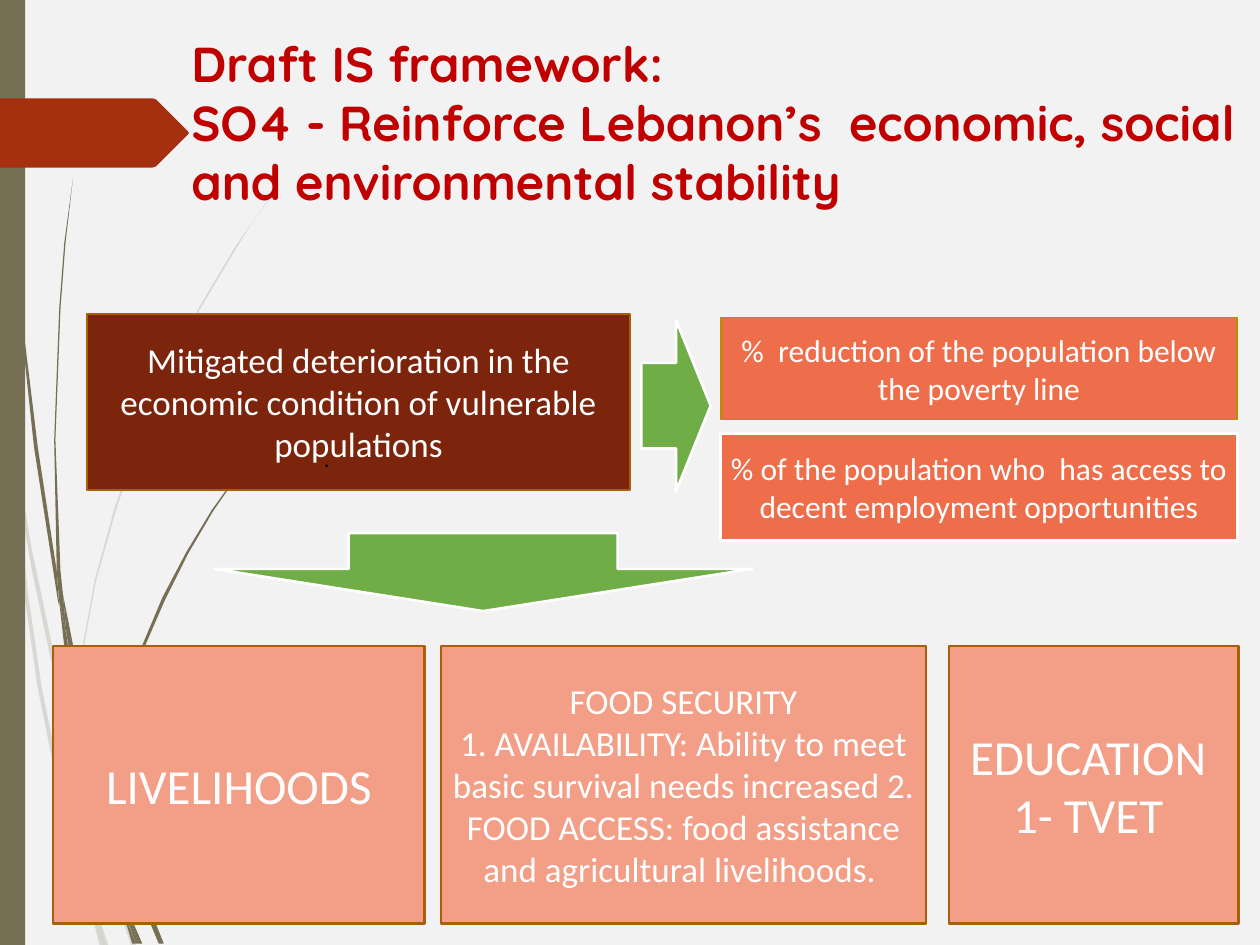
from lxml import etree
from pptx import Presentation
from pptx.dml.color import RGBColor
from pptx.enum import shapes, text
from pptx.oxml.ns import qn
from pptx.util import Inches, Pt

BACKGROUND = RGBColor(0xF2, 0xF2, 0xF2)
OLIVE = RGBColor(0x76, 0x6F, 0x54)
RUST = RGBColor(0xA5, 0x30, 0x10)
TITLE_RED = RGBColor(0xC0, 0x00, 0x00)
BROWN = RGBColor(0x7C, 0x24, 0x0C)
OCHRE = RGBColor(0xA7, 0x5F, 0x0A)
GOLD = RGBColor(0xBC, 0x8C, 0x00)
ORANGE = RGBColor(0xEE, 0x6E, 0x4B)
SALMON = RGBColor(0xF3, 0x9E, 0x87)
GREEN = RGBColor(0x70, 0xAD, 0x47)
WHITE = RGBColor(0xFF, 0xFF, 0xFF)
BLACK = RGBColor(0x00, 0x00, 0x00)

PALE_WISPS = [
    [(.08, 3.5), (.06, 3.22), (0, 2.82), (0, 2.99), (.07, 3.44)],
    [(.4, 5.22), (.59, 5.99), (.59, 5.86), (.43, 5.2), (.25, 4.35), (.1, 3.45),
     (.12, 3.76), (.25, 4.51)],
    [(.64, 6.07), (.61, 5.96), (.61, 6.1), (.85, 6.94), (1.04, 7.5), (1.08, 7.5),
     (.88, 6.92)],
    [(.83, 7.5), (.86, 7.5), (.73, 7.11)],
    [(.64, 6.83), (.48, 6.19), (.33, 5.45), (.22, 4.69), (.12, 3.76), (.08, 3.5),
     (.19, 4.7), (.3, 5.46), (.45, 6.21), (.64, 6.93), (.7, 7.14)],
    [(.61, 5.84), (.65, 5.22), (.76, 4.62), (.92, 4.05), (1.11, 3.49), (1.34, 2.95),
     (1.59, 2.45), (1.87, 1.98), (2.01, 1.75), (2.17, 1.54), (2.17, 1.53),
     (2.01, 1.75), (1.86, 1.97), (1.58, 2.44), (1.33, 2.94), (1.1, 3.48),
     (.91, 4.03), (.75, 4.61), (.64, 5.22), (.59, 5.84), (.61, 5.96)],
    [(.7, 7.14), (.79, 7.5), (.82, 7.5)],
    [(.67, 6.92), (.65, 6.83), (.69, 7.07), (.7, 7.14), (.82, 7.5), (.83, 7.5),
     (.73, 7.11)],
]
DARK_WISPS = [
    [(.05, 1.1), (.14, 2.33), (.27, 3.55), (.46, 4.77), (.47, 4.81), (.45, 4.53),
     (.3, 3.55), (.15, 2.32), (.06, 1.09), (.04, .48), (.03, 0), (.02, 0), (.03, .48)],
    [(.73, 5.92), (.88, 6.45), (.88, 6.31), (.77, 5.9), (.62, 5.32), (.5, 4.72),
     (.53, 5.05), (.62, 5.49)],
    [(.94, 6.49), (.91, 6.41), (.91, 6.56), (1.09, 7.08), (1.26, 7.49), (1.3, 7.49),
     (1.13, 7.06)],
    [(.91, 6.91), (.81, 6.57), (.69, 6.07), (.6, 5.56), (.53, 5.05), (.47, 4.77),
     (.56, 5.57), (.66, 6.08), (.77, 6.59), (.92, 7.08), (.97, 7.22), (.96, 7.17)],
    [(.5, 4.72), (.48, 4.53), (.44, 3.49), (.48, 2.45), (.52, 1.93), (.58, 1.41),
     (.51, 1.93), (.47, 2.45), (.43, 3.49), (.45, 4.49), (.49, 4.72)],
    [(1.1, 7.49), (1.13, 7.49), (1, 7.19)],
    [(.47, 4.77), (.53, 5.05), (.5, 4.72), (.45, 4.49), (.45, 4.53)],
    [(.91, 6.33), (.94, 5.92), (1.03, 5.52), (1.15, 5.13), (1.31, 4.76), (1.49, 4.4),
     (1.69, 4.06), (1.91, 3.74), (2.16, 3.44), (2.15, 3.44), (1.91, 3.73),
     (1.68, 4.05), (1.48, 4.38), (1.29, 4.74), (1.13, 5.12), (1.01, 5.51),
     (.92, 5.91), (.88, 6.31), (.91, 6.41)],
    [(.97, 7.22), (1.05, 7.49), (1.08, 7.49)],
    [(.96, 7.06), (.91, 6.91), (.96, 7.17), (1.08, 7.49), (1.1, 7.49), (1, 7.19)],
]
TAG_OUTLINE = [(0, .78), (1.21, .78), (1.24, .79), (1.49, 1.04), (1.5, 1.055),
               (1.49, 1.07), (1.24, 1.32), (1.21, 1.33), (0, 1.33)]


def paint(shape, fill, line=None, width=1.25, opacity=None):
    """Give a shape its fill, outline and opacity, without a shadow."""
    shape.shadow.inherit = False
    shape.fill.solid()
    shape.fill.fore_color.rgb = fill
    if opacity is not None:
        color = shape.fill._xPr.find(qn("a:solidFill"))[0]
        etree.SubElement(color, qn("a:alpha"), val=str(opacity * 1000))
    if line is None:
        shape.line.fill.background()
    else:
        shape.line.color.rgb = line
        shape.line.width = Pt(width)


def write(shape, lines, size=20, color=WHITE, font="Calibri", bold=False,
          align=text.PP_ALIGN.CENTER, anchor=text.MSO_ANCHOR.MIDDLE, inset=(.07, .04)):
    """Write one paragraph for each line of text into a shape."""
    frame = shape.text_frame
    frame.word_wrap = True
    frame.vertical_anchor = anchor
    frame.margin_left = frame.margin_right = Inches(inset[0])
    frame.margin_top = frame.margin_bottom = Inches(inset[1])
    for index, line in enumerate(lines):
        paragraph = frame.add_paragraph() if index else frame.paragraphs[0]
        paragraph.text = line
        paragraph.alignment = align
        for run in paragraph.runs:
            run.font.name = font
            run.font.size = Pt(size)
            run.font.bold = bold
            run.font.color.rgb = color


def add_preset(slide, kind, box, fill, **outline):
    """Add a painted preset shape in a box given in inches."""
    shape = slide.shapes.add_shape(kind, *map(Inches, box))
    paint(shape, fill, **outline)
    return shape


def add_outline(slide, points, fill, opacity=None):
    """Add a closed freeform through points given in inches."""
    start, *rest = [(Inches(x), Inches(y)) for x, y in points]
    builder = slide.shapes.build_freeform(*start, scale=1.0)
    builder.add_line_segments(rest, close=True)
    paint(builder.convert_to_shape(), fill, opacity=opacity)


def add_label(slide, box, lines, **style):
    """Add top-left aligned text in a box given in inches."""
    label = slide.shapes.add_textbox(*map(Inches, box))
    write(label, lines, align=text.PP_ALIGN.LEFT, anchor=text.MSO_ANCHOR.TOP, **style)


def add_card(slide, box, lines, fill, line=OCHRE, width=1.25, size=20):
    """Add an outlined rectangle with centred text."""
    card = add_preset(slide, shapes.MSO_SHAPE.RECTANGLE, box, fill, line=line, width=width)
    write(card, lines, size=size)


def add_arrow(slide, kind, box, head=.5):
    """Add a green block arrow with the given head proportion."""
    arrow = add_preset(slide, kind, box, GREEN, line=WHITE, width=1.5)
    arrow.adjustments[1] = head


def add_decoration(slide, height):
    """Draw the wisps, the side bar and the title tag."""
    for wisp in PALE_WISPS:
        add_outline(slide, wisp, OLIVE, opacity=20)
    for wisp in DARK_WISPS:
        add_outline(slide, wisp, OLIVE)
    add_preset(slide, shapes.MSO_SHAPE.RECTANGLE, (0, 0, .2, height), OLIVE)
    add_outline(slide, TAG_OUTLINE, RUST)


def add_outcome(slide, left, top):
    """Place the outcome, its arrow and its two indicators."""
    add_card(slide, (left, top, 4.31, 1.4),
             ["Mitigated deterioration in the economic condition of vulnerable populations"],
             BROWN)
    add_label(slide, (left + 1.81, top + .99, 5, .3), ["."], size=13.5, color=BLACK)
    add_arrow(slide, shapes.MSO_SHAPE.RIGHT_ARROW, (left + 4.4, top + .05, .55, 1.36))
    indicators = [
        (.03, .81, GOLD, 1, "%  reduction of the population below the poverty line"),
        (.95, .85, WHITE, 1.5,
         "% of the population who  has access to decent employment opportunities"),
    ]
    for offset, height, line, width, words in indicators:
        add_card(slide, (left + 5.03, top + offset, 4.1, height), [words], ORANGE,
                 line=line, width=width, size=18)


def add_sectors(slide, top, height):
    """Place the down arrow and the row of sector cards."""
    add_arrow(slide, shapes.MSO_SHAPE.DOWN_ARROW, (1.7, top - .9, 4.27, .62), head=.54)
    sectors = [
        (.42, 2.95, 28, ["LIVELIHOODS"]),
        (3.5, 3.85, 20, ["FOOD SECURITY",
                         "1. AVAILABILITY: Ability to meet basic survival needs increased 2. "
                         "FOOD ACCESS: food assistance and agricultural livelihoods. "]),
        (7.53, 2.3, 28, ["EDUCATION ", "1- TVET "]),
    ]
    for left, width, size, lines in sectors:
        add_card(slide, (left, top, width, height), lines, SALMON, size=size)


def main():
    """Build the slide and save it."""
    presentation = Presentation()
    presentation.slide_width, presentation.slide_height = Inches(10), Inches(7.5)
    slide = presentation.slides.add_slide(presentation.slide_layouts[6])
    slide.background.fill.solid()
    slide.background.fill.fore_color.rgb = BACKGROUND
    add_decoration(slide, 7.5)
    add_label(slide, (1.42, .22, 8.78, 1.3),
              ["Draft IS framework: \vSO4 - Reinforce Lebanon’s  economic, social "
               "and environmental stability"],
              size=28, color=TITLE_RED, font="Quicksand", bold=True, inset=(.1, .05))
    add_outcome(slide, .69, 2.49)
    add_sectors(slide, 5.13, 2.2)
    presentation.save("out.pptx")


if __name__ == "__main__":
    main()
